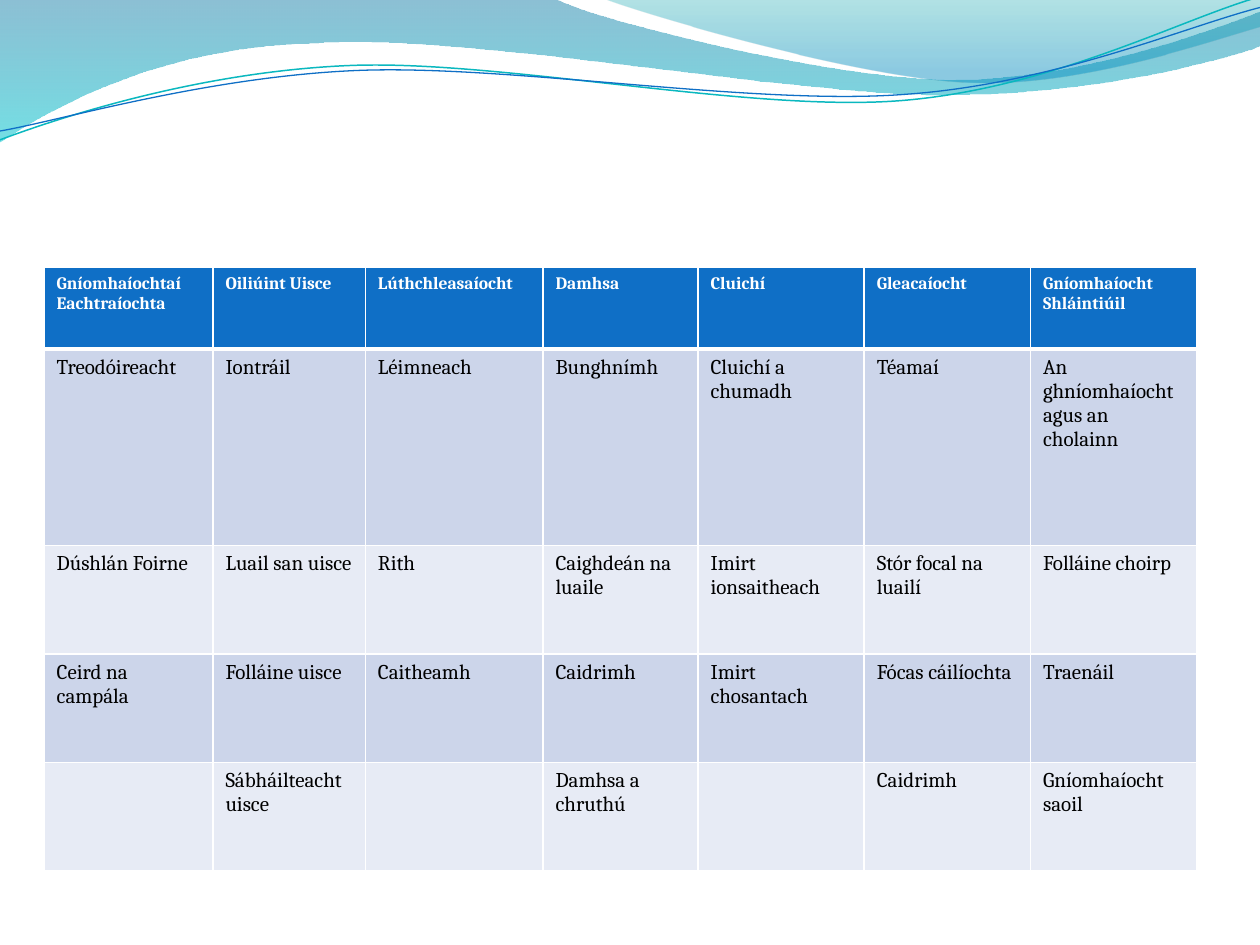
"""Build a slide with a wave banner above a table of physical education strands."""
import math
from dataclasses import dataclass
from typing import Optional

from lxml import etree
from pptx import Presentation
from pptx import util as u
from pptx.dml.color import RGBColor
from pptx.oxml.ns import qn

FONT = "Cambria"
WHITE, BLACK, BLUE, TEAL = "FFFFFF", "000000", "0F6FC6", "0AB8BF"
BANDS = ("CCD5EA", "E7EBF5")

Point = tuple[float, float]


@dataclass
class Stop:
    position: float
    color: str
    opacity: int


@dataclass
class Wave:
    start: Point
    segments: list[tuple[Point, ...]]
    stops: tuple[Stop, ...] = ()
    line: Optional[str] = None
    width: float = 0
    tilt: float = 0
    pivot: Point = (0, 0)


WAVES = [
    Wave(
        (0, 0),
        [
            ((4.4, -0.01),),
            ((4.76, 0.17), (6.64, 0.63), (7.58, 0.63)),
            ((8.53, 0.63), (9.58, 0.26), (10, 0.09)),
            ((10.01, 0.36),),
            ((9.83, 0.44), (8.7, 0.76), (7.46, 0.75)),
            ((6.22, 0.75), (3.82, 0.28), (2.57, 0.34)),
            ((1.29, 0.36), (0.46, 0.83), (-0.01, 1.13)),
        ],
        stops=(Stop(0, "0074A1", 45), Stop(1, "00C6CF", 55)),
    ),
    Wave(
        (4.79, -0.01),
        [
            ((5.09, 0.11), (6.82, 0.62), (7.69, 0.65)),
            ((8.56, 0.69), (9.61, 0.32), (10, 0.21)),
            ((10, 0),),
        ],
        stops=(Stop(0, "00A1A9", 30), Stop(0.8, "008BBF", 45)),
    ),
    Wave(
        (0, 1.11),
        [
            ((0.48, 0.93), (1.58, 0.57), (2.77, 0.52)),
            ((3.95, 0.47), (5.93, 0.89), (7.13, 0.8)),
            ((8.33, 0.71), (9.38, 0.15), (9.98, -0.02)),
        ],
        line=TEAL, width=0.85, tilt=-2.7, pivot=(4.99, 0.57),
    ),
    Wave(
        (0, 1.04),
        [
            ((0.47, 0.96), (1.64, 0.61), (2.83, 0.56)),
            ((4.03, 0.51), (5.97, 0.84), (7.17, 0.75)),
            ((8.36, 0.67), (9.41, 0.21), (10, 0.06)),
        ],
        line=BLUE, width=0.75, tilt=-2.7, pivot=(5, 0.59),
    ),
]

COLUMN_WIDTHS = (1.34, 1.21, 1.41, 1.23, 1.32, 1.32, 1.32)
ROW_HEIGHTS = (0.65, 1.56, 0.86, 0.86, 0.86)
STRANDS = [
    ["Gníomhaíochtaí Eachtraíochta", "Oiliúint Uisce", "Lúthchleasaíocht", "Damhsa",
     "Cluichí", "Gleacaíocht", "Gníomhaíocht\nShláintiúil"],
    ["Treodóireacht", "Iontráil", "Léimneach", "Bunghnímh",
     "Cluichí a chumadh", "Téamaí", "An ghníomhaíocht agus an cholainn"],
    ["Dúshlán Foirne", "Luail san uisce", "Rith", "Caighdeán na luaile",
     "Imirt ionsaitheach", "Stór focal na luailí", "Folláine choirp"],
    ["Ceird na campála", "Folláine uisce", "Caitheamh", "Caidrimh",
     "Imirt chosantach", "Fócas cáilíochta", "Traenáil"],
    ["", "Sábháilteacht uisce", "", "Damhsa a chruthú",
     "", "Caidrimh", "Gníomhaíocht saoil"],
]


def rgb(color: str) -> RGBColor:
    return RGBColor.from_string(color)


def level(point: Point, wave: Wave) -> tuple[int, int]:
    angle = math.radians(-wave.tilt)
    dx, dy = point[0] - wave.pivot[0], point[1] - wave.pivot[1]
    x = wave.pivot[0] + dx * math.cos(angle) - dy * math.sin(angle)
    y = wave.pivot[1] + dx * math.sin(angle) + dy * math.cos(angle)
    return u.Inches(x), u.Inches(y)


def bend(ribbon, wave: Wave) -> None:
    vertices = iter(list(ribbon.element.spPr.iter(qn("a:lnTo"))))
    for segment in wave.segments:
        steps = [next(vertices) for _ in segment]
        if len(steps) == 3:
            curve = etree.Element(qn("a:cubicBezTo"))
            steps[0].addprevious(curve)
            for step in steps:
                curve.append(step[0])
                step.getparent().remove(step)


def draw_wave(slide, wave: Wave) -> None:
    builder = slide.shapes.build_freeform(*level(wave.start, wave))
    points = [level(point, wave) for segment in wave.segments for point in segment]
    builder.add_line_segments(points, close=bool(wave.stops))
    ribbon = builder.convert_to_shape()
    bend(ribbon, wave)
    ribbon.rotation = wave.tilt
    ribbon.shadow.inherit = False
    if wave.line:
        ribbon.fill.background()
        ribbon.line.color.rgb = rgb(wave.line)
        ribbon.line.width = u.Pt(wave.width)
        return
    ribbon.line.fill.background()
    ribbon.fill.gradient()
    ribbon.fill.gradient_angle = 270
    for gradient_stop, stop in zip(ribbon.fill.gradient_stops, wave.stops):
        gradient_stop.position = stop.position
        gradient_stop.color.rgb = rgb(stop.color)
    for color, stop in zip(ribbon.element.spPr.iter(qn("a:srgbClr")), wave.stops):
        etree.SubElement(color, qn("a:alpha"), val=str(stop.opacity * 1000))


def draw_borders(cell, top: float, bottom: float) -> None:
    properties = cell._tc.get_or_add_tcPr()
    for side, width in (("L", 1), ("R", 1), ("T", top), ("B", bottom)):
        border = etree.SubElement(properties, qn(f"a:ln{side}"), w=str(u.Pt(width)))
        paint = etree.SubElement(border, qn("a:solidFill"))
        etree.SubElement(paint, qn("a:srgbClr"), val=WHITE)


def fill_cell(cell, content: str, row: int) -> None:
    header = row == 0
    draw_borders(cell, top=3 if row == 1 else 1, bottom=3 if header else 1)
    cell.fill.solid()
    cell.fill.fore_color.rgb = rgb(BLUE if header else BANDS[(row - 1) % 2])
    if not content:
        return
    for index, wording in enumerate(content.split("\n")):
        frame = cell.text_frame
        paragraph = frame.add_paragraph() if index else frame.paragraphs[0]
        run = paragraph.add_run()
        run.text = wording
        run.font.name = FONT
        run.font.size = u.Pt(10 if header else 12)
        run.font.bold = header
        run.font.color.rgb = rgb(WHITE if header else BLACK)


def draw_strands(slide) -> None:
    strands = slide.shapes.add_table(
        len(ROW_HEIGHTS), len(COLUMN_WIDTHS), u.Inches(0.35), u.Inches(2.12),
        u.Inches(sum(COLUMN_WIDTHS)), u.Inches(sum(ROW_HEIGHTS)),
    ).table
    for column, width in zip(strands.columns, COLUMN_WIDTHS):
        column.width = u.Inches(width)
    for row, height in zip(strands.rows, ROW_HEIGHTS):
        row.height = u.Inches(height)
    for row, contents in enumerate(STRANDS):
        for column, content in enumerate(contents):
            fill_cell(strands.cell(row, column), content, row)


def main() -> None:
    deck = Presentation()
    deck.slide_width, deck.slide_height = u.Inches(10), u.Inches(7.5)
    slide = deck.slides.add_slide(deck.slide_layouts[6])
    for wave in WAVES:
        draw_wave(slide, wave)
    draw_strands(slide)
    deck.save("out.pptx")


if __name__ == "__main__":
    main()
